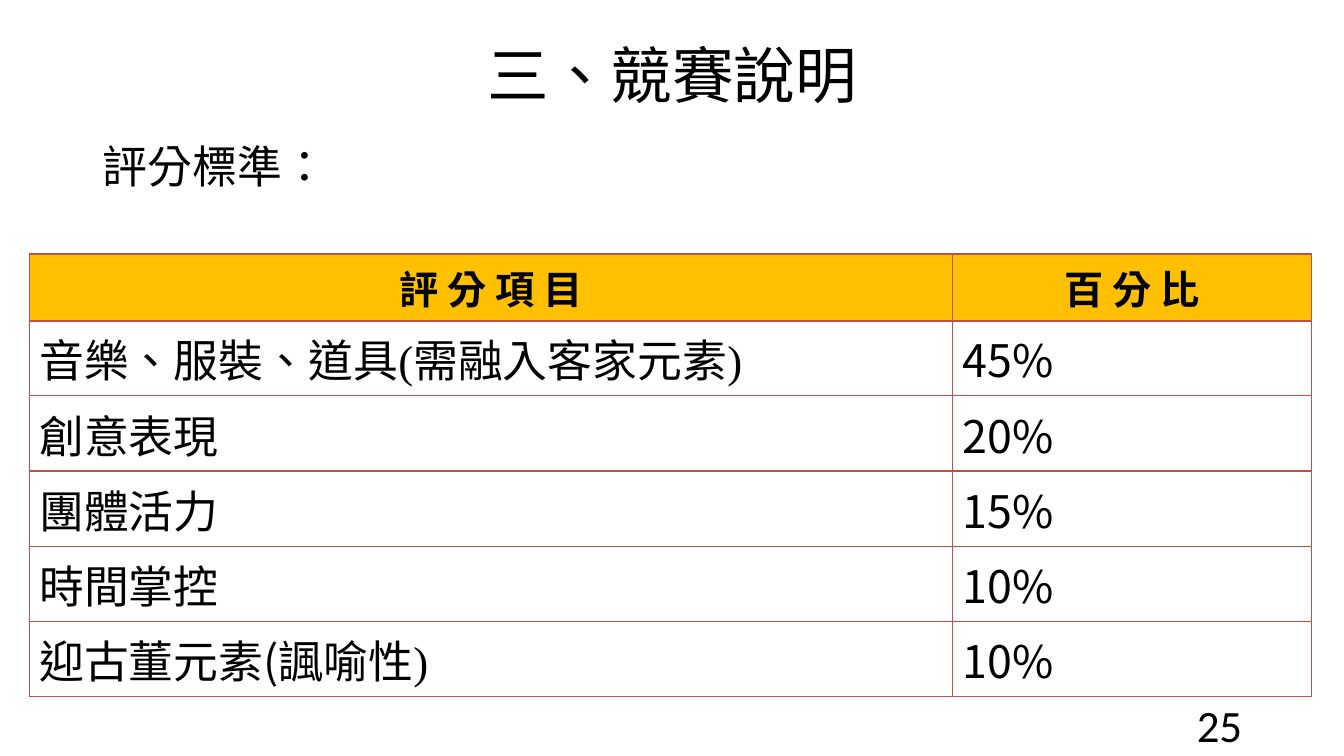
"""Build the slide listing the contest scoring criteria."""
import dataclasses
import typing

import lxml.etree
import pptx
import pptx.dml.color
import pptx.enum.lang
import pptx.enum.text
import pptx.oxml
import pptx.oxml.ns
import pptx.util

Inches = pptx.util.Inches
ALIGN = pptx.enum.text.PP_ALIGN
COLOURS = {"text": "000000", "header": "FFC000", "border": "C0504D"}
SERIF, SANS, BODY = "Times New Roman", "Noto Sans CJK SC", "Calibri"
COLUMN_WIDTHS = (9.16, 3.56)
HEADER_HEIGHT, ROW_HEIGHT = 0.6, 0.61


@dataclasses.dataclass
class Span:
    """A piece of text in one font."""
    text: str
    font: str = SERIF


@dataclasses.dataclass
class TextBlock:
    """A one-line text frame with its place and format."""
    text: str
    place: tuple[float, float, float, float]
    size: int
    align: typing.Any
    line_spacing: float


@dataclasses.dataclass
class Criterion:
    """A scoring item and its share of the total."""
    item: list[Span]
    share: str


TITLE = TextBlock("三、競賽說明", (0.92, 0.4, 11.5, 1.45), 44, ALIGN.CENTER, 0.9)
SUBHEAD = TextBlock("評分標準：", (0.92, 1.39, 11.5, 4.76), 32, ALIGN.LEFT, 0.9)
PAGE_NUMBER = TextBlock("25", (9.42, 6.87, 3, 0.4), 32, ALIGN.RIGHT, 1.0)
HEADINGS = ("評 分 項 目", "百 分 比")
CRITERIA = [
    Criterion([Span("音樂、服裝、道具(需融入客家元素)")], "45%"),
    Criterion([Span("創意表現")], "20%"),
    Criterion([Span("團體活力")], "15%"),
    Criterion([Span("時間掌控")], "10%"),
    Criterion([Span("迎古董元素"), Span("(", SANS), Span("諷喻性)")], "10%"),
]


def set_all(target: typing.Any, values: dict[str, typing.Any]) -> None:
    """Set each named attribute on the target."""
    for name, value in values.items():
        setattr(target, name, value)


def colour(name: str) -> pptx.dml.color.RGBColor:
    """Return a named colour."""
    return pptx.dml.color.RGBColor.from_string(COLOURS[name])


def add_span(para: typing.Any, span: Span, size: int, bold: bool = False) -> None:
    """Add a formatted run to a paragraph."""
    run = para.add_run()
    run.text = span.text
    set_all(run.font, {
        "name": span.font, "size": pptx.util.Pt(size), "bold": bold,
        "language_id": pptx.enum.lang.MSO_LANGUAGE_ID.from_xml("zh-TW"),
    })
    run.font.color.rgb = colour("text")


def fill_box(box: typing.Any, block: TextBlock) -> None:
    """Place a text shape and write its line without a bullet."""
    set_all(box, dict(zip(("left", "top", "width", "height"), map(Inches, block.place))))
    set_all(box.text_frame, {
        "word_wrap": True,
        "auto_size": pptx.enum.text.MSO_AUTO_SIZE.NONE,
        "vertical_anchor": pptx.enum.text.MSO_ANCHOR.TOP,
    })
    para = box.text_frame.paragraphs[0]
    set_all(para, {"alignment": block.align, "line_spacing": block.line_spacing,
                   "space_before": pptx.util.Pt(0)})
    properties = para._p.get_or_add_pPr()
    properties.set("marL", "0")
    properties.set("indent", "0")
    lxml.etree.SubElement(properties, pptx.oxml.ns.qn("a:buNone"))
    add_span(para, Span(block.text, BODY), block.size)


def set_borders(cell: typing.Any, bottom: int) -> None:
    """Draw the four cell borders, the bottom one at its own width."""
    properties = cell._tc.get_or_add_tcPr()
    widths = {"lnL": 1, "lnR": 1, "lnT": 1, "lnB": bottom}
    for index, (side, width) in enumerate(widths.items()):
        properties.insert(index, pptx.oxml.parse_xml(
            f'<a:{side} {pptx.oxml.ns.nsdecls("a")} w="{pptx.util.Pt(width)}">'
            f'<a:solidFill><a:srgbClr val="{COLOURS["border"]}"/></a:solidFill>'
            f'</a:{side}>'))


def fill_cell(cell: typing.Any, spans: list[Span], header: bool) -> None:
    """Write and format a table cell."""
    para = cell.text_frame.paragraphs[0]
    para.alignment = ALIGN.CENTER if header else ALIGN.LEFT
    for span in spans:
        add_span(para, span, 28 if header else 32, header)
    if header:
        cell.fill.solid()
        cell.fill.fore_color.rgb = colour("header")
    else:
        cell.fill.background()
    set_borders(cell, 2 if header else 1)


def add_criteria_table(page: typing.Any) -> None:
    """Add the table of criteria and shares."""
    rows = [[[Span(heading)] for heading in HEADINGS]]
    rows += [[entry.item, [Span(entry.share, SANS)]] for entry in CRITERIA]
    height = HEADER_HEIGHT + ROW_HEIGHT * len(CRITERIA)
    table = page.shapes.add_table(
        len(rows), len(COLUMN_WIDTHS), Inches(0.29), Inches(2.52),
        Inches(sum(COLUMN_WIDTHS)), Inches(height)).table
    for column, width in zip(table.columns, COLUMN_WIDTHS):
        column.width = Inches(width)
    for row_index, row in enumerate(rows):
        header = row_index == 0
        table.rows[row_index].height = Inches(HEADER_HEIGHT if header else ROW_HEIGHT)
        for column_index, spans in enumerate(row):
            fill_cell(table.cell(row_index, column_index), spans, header)


def main() -> None:
    """Build and save the deck."""
    deck = pptx.Presentation()
    set_all(deck, {"slide_width": Inches(13.33), "slide_height": Inches(7.5)})
    page = deck.slides.add_slide(deck.slide_layouts[1])
    fill_box(page.shapes.title, TITLE)
    fill_box(page.placeholders[1], SUBHEAD)
    fill_box(page.shapes.add_textbox(*map(Inches, PAGE_NUMBER.place)), PAGE_NUMBER)
    add_criteria_table(page)
    deck.save("out.pptx")


if __name__ == "__main__":
    main()
